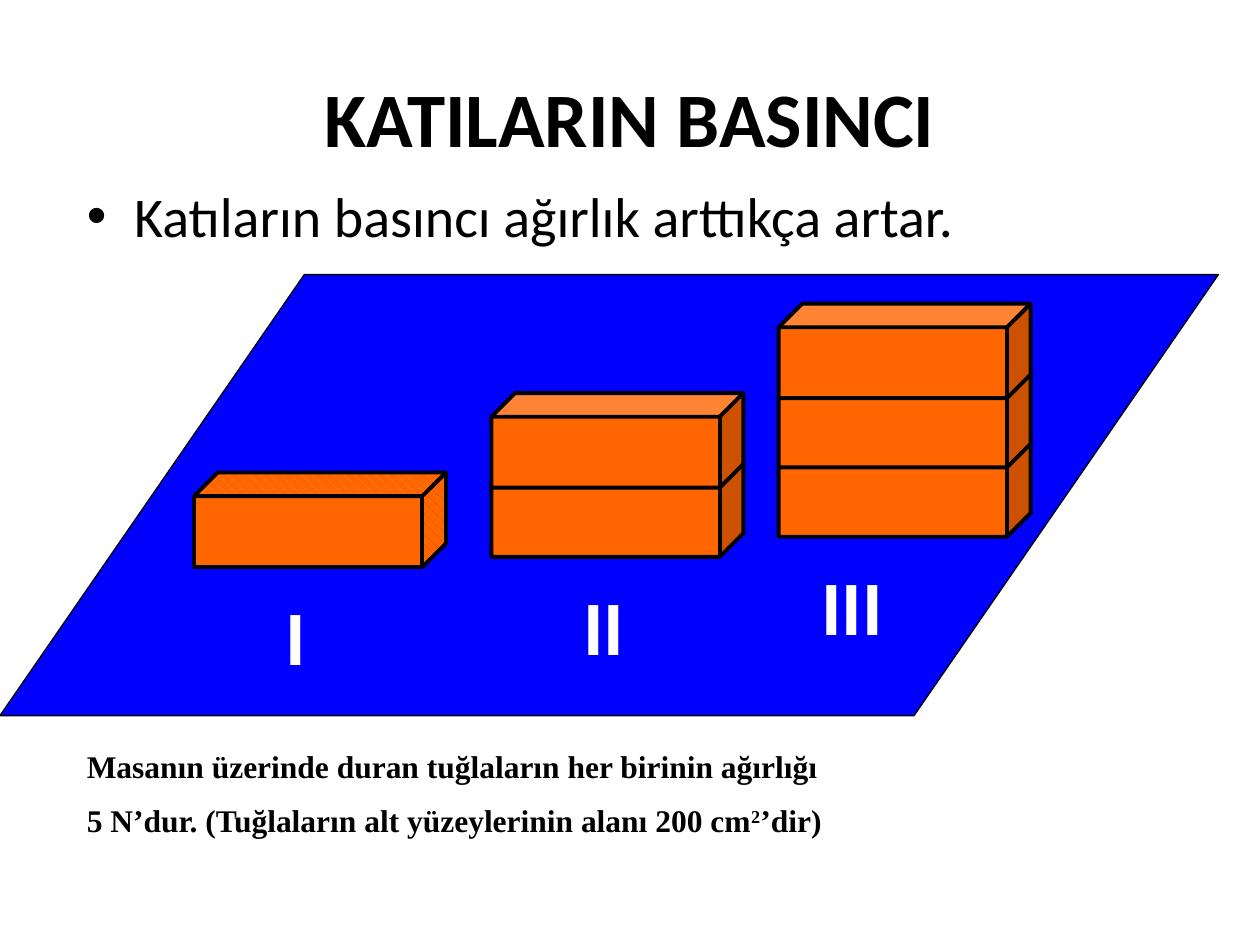
from dataclasses import dataclass

from pptx import Presentation
from pptx.dml.color import RGBColor
from pptx.enum import dml, shapes, text
from pptx.util import Emu, Pt

PX = 9144
BRICK_W, BRICK_H, BRICK_STEP = 200, 75, 55


@dataclass(frozen=True)
class Theme:
    """Colours, fonts and type sizes of the slide."""
    ink: str = "000000"
    light: str = "FFFFFF"
    table: str = "0000FF"
    brick: str = "FF6600"
    sans: str = "Calibri"
    serif: str = "Times New Roman"
    heading: int = 44
    bullet: int = 32
    note: int = 18


THEME = Theme()


def px(*lengths):
    """Turn px lengths into EMU."""
    return [Emu(length * PX) for length in lengths]


def place(holder, box):
    """Move a placeholder to a box."""
    holder.left, holder.top, holder.width, holder.height = px(*box)


def write(frame, paragraphs, *, size, font=THEME.sans, color=THEME.ink,
          bold=False, align=None, before=None):
    """Write paragraphs of (words, baseline) runs in one format."""
    for index, runs in enumerate(paragraphs):
        paragraph = frame.add_paragraph() if index else frame.paragraphs[0]
        if align is not None:
            paragraph.alignment = align
        if before is not None:
            paragraph.space_before = Pt(before)
        for words, baseline in runs:
            run = paragraph.add_run()
            run.text = words
            run.font.size, run.font.name, run.font.bold = Pt(size), font, bold
            run.font.color.rgb = RGBColor.from_string(color)
            if baseline:
                run._r.get_or_add_rPr().set("baseline", str(baseline * 1000))


def add_text(slide, box, paragraphs, **style):
    """Add a wrapping text box."""
    frame = slide.shapes.add_textbox(*px(*box)).text_frame
    frame.word_wrap = True
    write(frame, paragraphs, **style)


def add_solid(slide, preset, box, color, line, adjust, hatched=False):
    """Add an outlined preset shape."""
    solid = slide.shapes.add_shape(preset, *px(*box))
    solid.shadow.inherit = False
    solid.adjustments[0] = adjust
    paint = RGBColor.from_string(color)
    if hatched:
        solid.fill.patterned()
        solid.fill.pattern = dml.MSO_PATTERN.DASHED_DOWNWARD_DIAGONAL
        solid.fill.fore_color.rgb = solid.fill.back_color.rgb = paint
    else:
        solid.fill.solid()
        solid.fill.fore_color.rgb = paint
    solid.line.color.rgb = RGBColor.from_string(THEME.ink)
    solid.line.width = Pt(line)


def add_heading(slide, box):
    """Fill the title placeholder."""
    title = slide.shapes.title
    place(title, box)
    title.text_frame.vertical_anchor = text.MSO_ANCHOR.MIDDLE
    write(title.text_frame, [[("KATILARIN BASINCI", 0)]], size=THEME.heading,
          bold=True, align=text.PP_ALIGN.CENTER)


def add_statement(slide, box):
    """Fill the body placeholder."""
    body = slide.placeholders[1]
    place(body, box)
    write(body.text_frame, [[("Katıların basıncı ağırlık arttıkça artar.", 0)]],
          size=THEME.bullet)


def add_stack(slide, left, base, count, hatched=False):
    """Pile bricks upwards from the base line."""
    for level in range(count):
        top = base - BRICK_H - level * BRICK_STEP
        add_solid(slide, shapes.MSO_SHAPE.CUBE, (left, top, BRICK_W, BRICK_H),
                  THEME.brick, 2.25, 0.25, hatched)


def add_table_scene(slide, box):
    """Draw the table top with its numbered stacks."""
    left, top, width, height = box
    add_solid(slide, shapes.MSO_SHAPE.PARALLELOGRAM, box, THEME.table, 0.75, 0.69)
    stacks = [(154, 232, 63), (390, 224, 63), (618, 208, 24)]
    for count, (x, base, indent) in enumerate(stacks, start=1):
        add_stack(slide, left + x, top + base, count, hatched=count == 1)
        add_text(slide, (left + x + indent, top + base + 12, 83, 83),
                 [[("I" * count, 0)]], size=THEME.heading, color=THEME.light,
                 bold=True)


def add_note(slide, box):
    """Write the given weight and area below the table."""
    add_text(slide, box, [
        [("Masanın üzerinde duran tuğlaların her birinin ağırlığı", 0)],
        [("5 N’dur. (Tuğlaların alt yüzeylerinin alanı 200 cm", 0),
         ("2", 30), ("’dir)", 0)],
    ], size=THEME.note, font=THEME.serif, bold=True, before=9.5)


def main():
    """Build and save the slide."""
    deck = Presentation()
    deck.slide_width, deck.slide_height = px(1000, 750)
    slide = deck.slides.add_slide(deck.slide_layouts[1])
    add_heading(slide, (50, 30, 900, 125))
    add_statement(slide, (59, 139, 900, 495))
    add_table_scene(slide, (0, 218, 967, 350))
    add_note(slide, (59, 588, 965, 86))
    deck.save("out.pptx")


if __name__ == "__main__":
    main()
